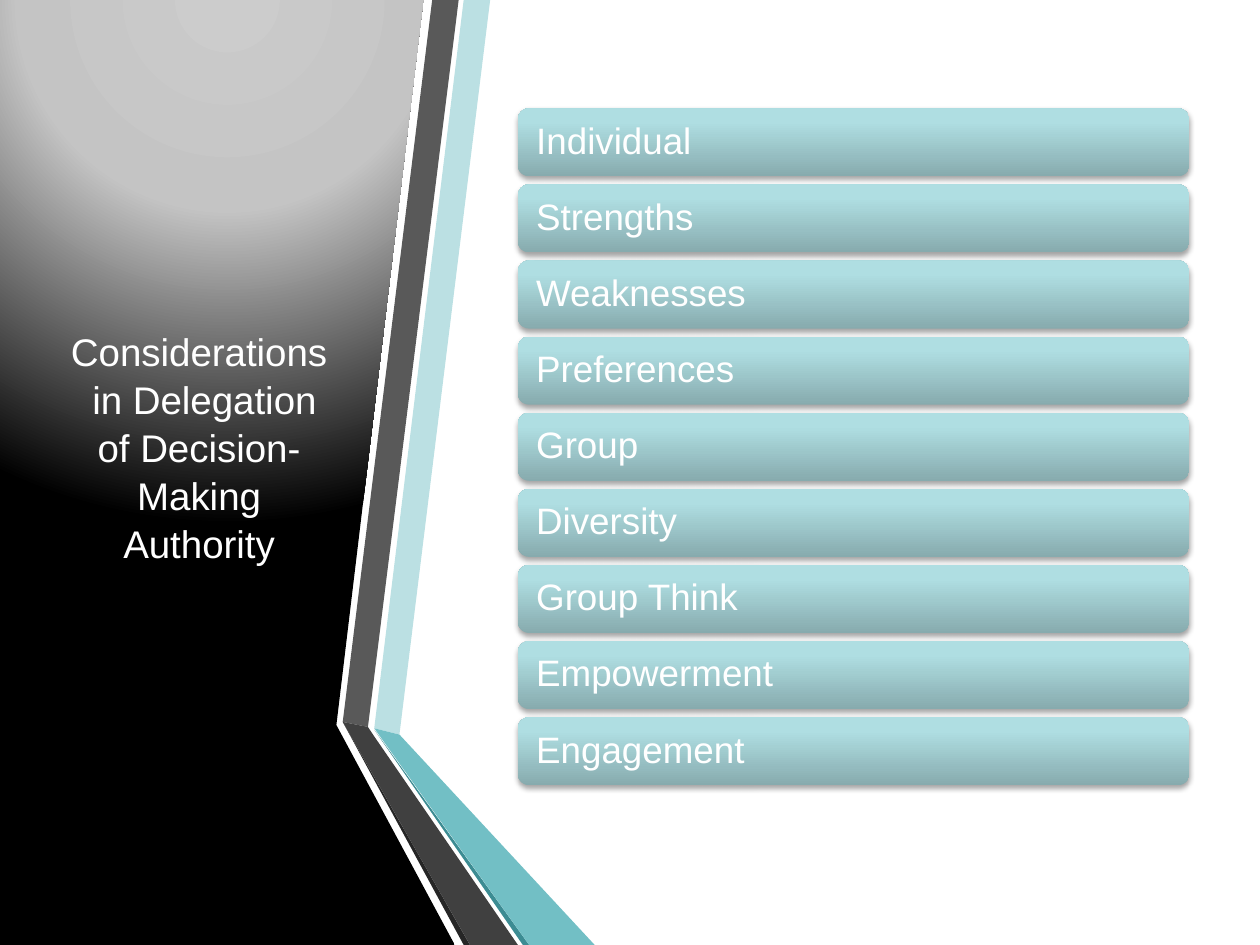
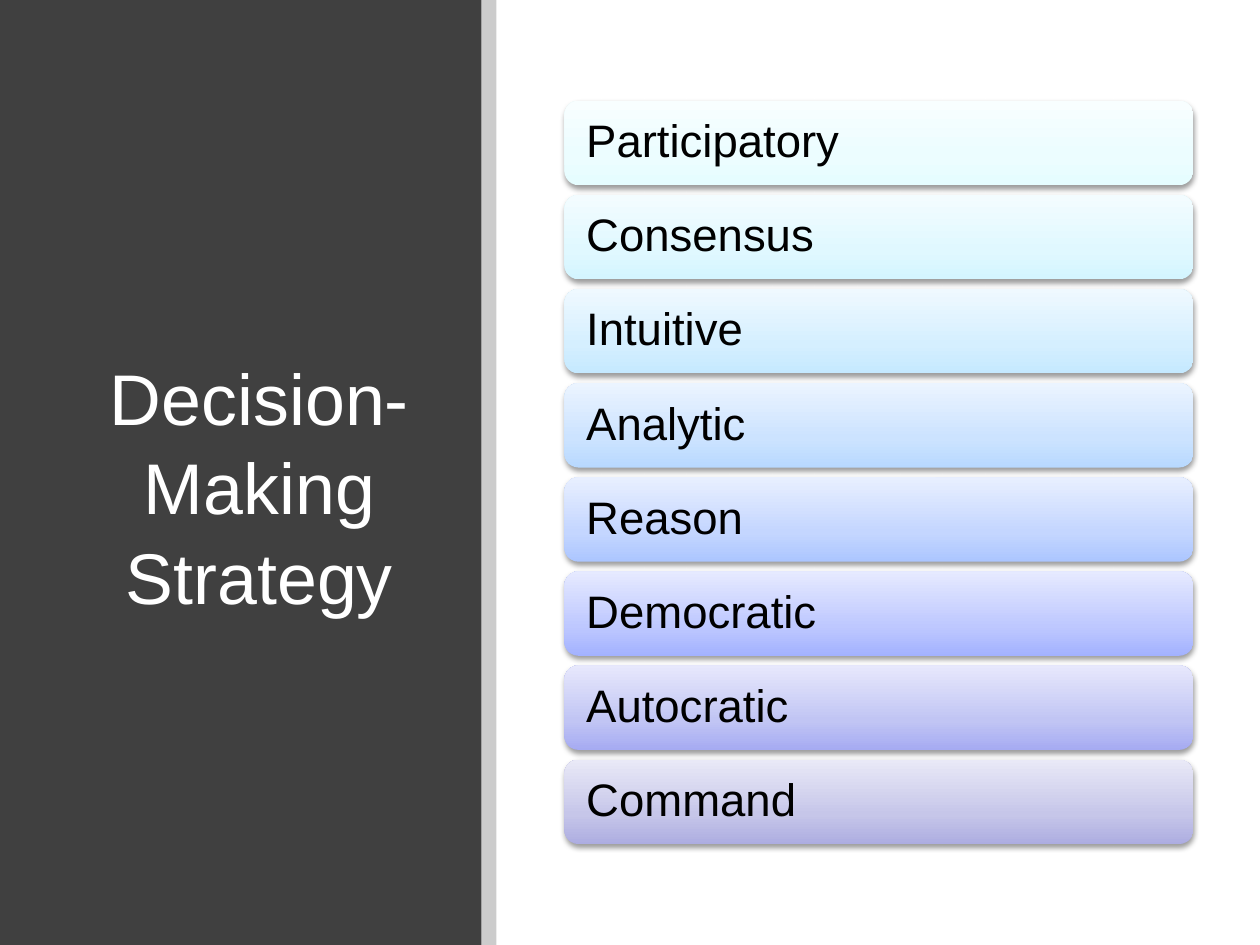
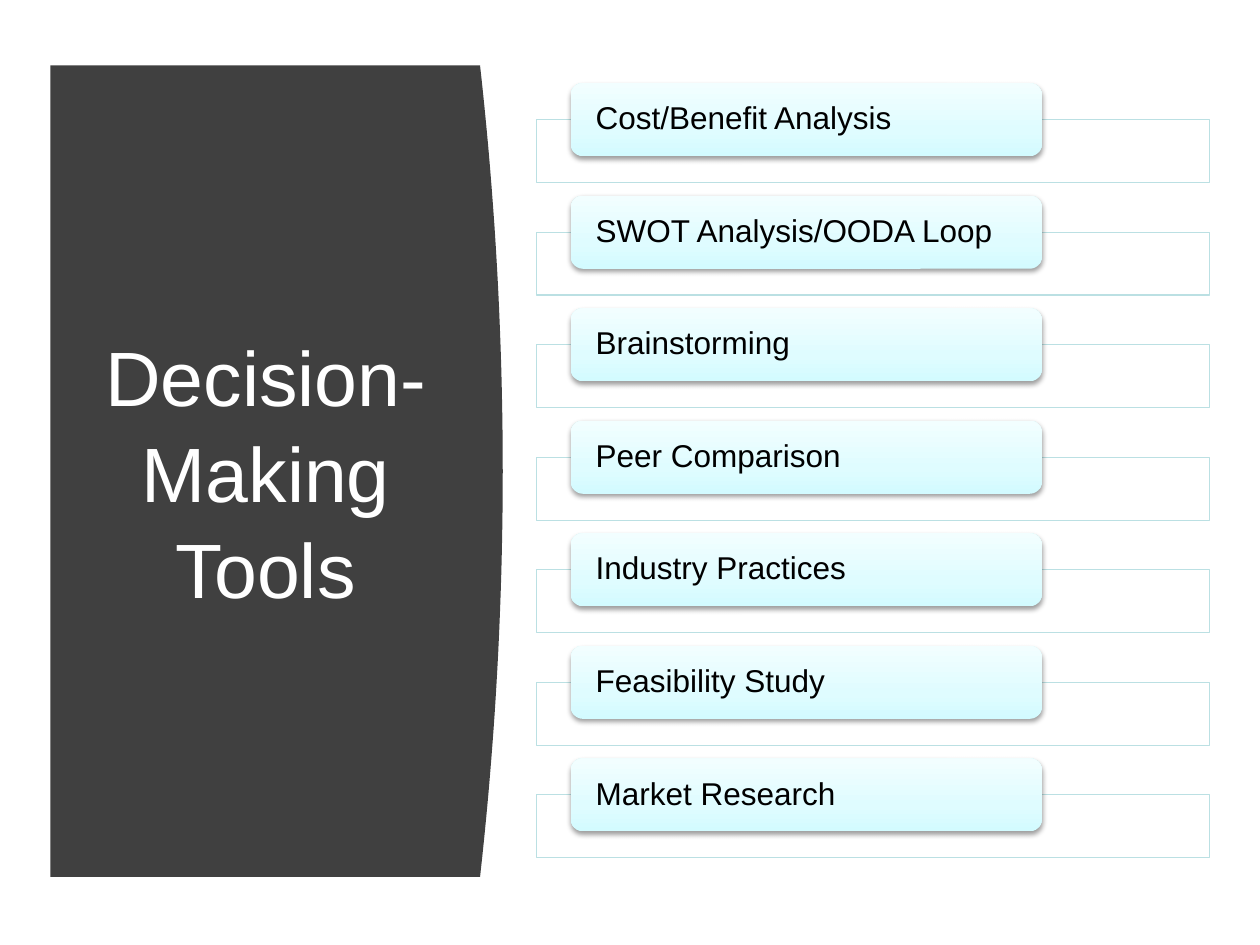
from lxml import etree
from pptx import Presentation
from pptx import util as u
from pptx.dml.color import RGBColor
from pptx.enum import shapes, text
from pptx.oxml import ns

COLUMNS, ROWS = 100, 75
FONT = "Arial"
WHITE, BLACK, CHARCOAL, AQUA = "FFFFFF", "000000", "404040", "BBE0E3"
UPWARD = ("lin", {"ang": "16200000", "scaled": "0"})


def rgb(code):
    return RGBColor.from_string(code)


def add_xml(parent, tag, **attributes):
    return etree.SubElement(parent, ns.qn(tag), attributes)


class Deck:
    """Holds the shared style and the slide being built."""

    def __init__(self):
        self.prs = Presentation()
        self.prs.slide_width, self.prs.slide_height = u.Inches(10), u.Inches(7.5)
        self.slide = None

    def new_slide(self):
        self.slide = self.prs.slides.add_slide(self.prs.slide_layouts[5])

    def x(self, columns):
        return round(self.prs.slide_width * columns / COLUMNS)

    def y(self, rows):
        return round(self.prs.slide_height * rows / ROWS)

    def box(self, left, top, width, height):
        return self.x(left), self.y(top), self.x(width), self.y(height)

    def title(self, wording, size, *place):
        """Place the title placeholder above everything drawn so far."""
        title = self.slide.shapes.title
        title.left, title.top, title.width, title.height = self.box(*place)
        self.slide.shapes._spTree.append(title._element)
        title.text_frame.auto_size = text.MSO_AUTO_SIZE.NONE
        self.label(title, wording, size, WHITE, text.PP_ALIGN.CENTER, 1.04)

    def label(self, shape, wording, size, color, align, spacing):
        frame = shape.text_frame
        frame.text = wording
        frame.word_wrap = True
        frame.vertical_anchor = text.MSO_ANCHOR.MIDDLE
        paragraph = frame.paragraphs[0]
        paragraph.alignment, paragraph.line_spacing = align, spacing
        font = paragraph.font
        font.name, font.size, font.color.rgb = FONT, u.Pt(size), rgb(color)

    def plain(self, shape, fill, alpha=100):
        shape.shadow.inherit = False
        shape.line.fill.background()
        shape.fill.solid()
        shape.fill.fore_color.rgb = rgb(fill)
        if alpha < 100:
            color = shape._element.spPr.find(".//" + ns.qn("a:srgbClr"))
            add_xml(color, "a:alpha", val=str(alpha * 1000))
        return shape

    def rectangle(self, place, fill, alpha=100, kind=shapes.MSO_SHAPE.RECTANGLE):
        shape = self.slide.shapes.add_shape(kind, *self.box(*place))
        return self.plain(shape, fill, alpha)

    def outline(self, points, fill):
        corners = [(self.x(column), self.y(row)) for column, row in points]
        builder = self.slide.shapes.build_freeform(*corners[0])
        builder.add_line_segments(corners[1:], close=True)
        return self.plain(builder.convert_to_shape(), fill)

    def gradient(self, shape, stops, direction=UPWARD):
        """Fill with (percent, colour) stops, and return the shading element."""
        properties = shape._element.spPr
        solid = properties.find(ns.qn("a:solidFill"))
        gradient = etree.Element(ns.qn("a:gradFill"), rotWithShape="1")
        stop_list = add_xml(gradient, "a:gsLst")
        for percent, color in stops:
            stop = add_xml(stop_list, "a:gs", pos=str(percent * 1000))
            add_xml(stop, "a:srgbClr", val=color)
        tag, attributes = direction
        shade = add_xml(gradient, "a:" + tag, **attributes)
        properties.replace(solid, gradient)
        return shade

    def shadow(self, shape, opacity, distance):
        effects = shape._element.spPr.find(ns.qn("a:effectLst"))
        outer = add_xml(effects, "a:outerShdw", blurRad=str(u.Pt(3.1)),
                        dist=str(u.Pt(distance)), dir="5400000", rotWithShape="0")
        color = add_xml(outer, "a:srgbClr", val=BLACK)
        add_xml(color, "a:alpha", val=str(opacity * 1000))

    def bar(self, wording, place, stops, size, inset, color=BLACK,
            opacity=38, distance=1.6):
        bar = self.rectangle(place, WHITE, kind=shapes.MSO_SHAPE.ROUNDED_RECTANGLE)
        self.gradient(bar, stops)
        self.shadow(bar, opacity, distance)
        frame = bar.text_frame
        frame.margin_left = frame.margin_right = self.x(inset)
        frame.margin_top = frame.margin_bottom = 0
        self.label(bar, wording, size, color, text.PP_ALIGN.LEFT, 0.9)


def considerations(deck):
    deck.new_slide()
    # Spotlit panel and folded ribbons
    panel = deck.outline([(0, 0), (33.6, 0), (26.7, 57.55), (36.1, 75), (0, 75)], BLACK)
    glow = deck.gradient(panel, [(0, "CCCCCC"), (40, "C4C4C4"), (100, BLACK)],
                         ("path", {"path": "circle"}))
    add_xml(glow, "a:fillToRect", l="50000", t="-80000", r="50000", b="180000")
    ribbons = [
        (AQUA, [(29.7, 57.8), (31.7, 58.3), (38.9, 0), (36.8, 0)]),
        ("595959", [(36.4, 0), (34.3, 0), (27.2, 57.3), (29.2, 57.7)]),
        ("262626", [(27.2, 57.3), (36.8, 75), (37.3, 75)]),
        ("3C8C93", [(29.7, 57.9), (41.5, 75), (42, 75)]),
        ("72BFC5", [(29.7, 57.8), (42, 75), (47.2, 75), (31.7, 58.3)]),
        (CHARCOAL, [(41.1, 75), (29.6, 58.3), (29.2, 57.7), (27.2, 57.3), (37.3, 75)]),
    ]
    for color, points in ribbons:
        deck.outline(points, color)
    deck.title("Considerations  in Delegation of Decision-Making Authority",
               22, 4.4, 7.5, 22.8, 55.8)
    # Considerations
    teal = [(0, "87ABAE"), (80, "AFDEE2"), (100, "AFE0E4")]
    factors = ["Individual", "Strengths", "Weaknesses", "Preferences", "Group",
               "Diversity", "Group Think", "Empowerment", "Engagement"]
    for row, factor in enumerate(factors):
        deck.bar(factor, (41.1, 8.6 + 6.04 * row, 53.3, 5.4), teal, 21, 1.2,
                 WHITE, opacity=35, distance=1.8)


def strategy(deck):
    deck.new_slide()
    # Side panel with edge strip
    deck.rectangle((0, 0, 38.2, 75), CHARCOAL)
    deck.rectangle((38.2, 0, 1.2, 75), BLACK, alpha=20)
    deck.title("Decision-Making Strategy", 41, 6.9, 8.9, 27.4, 59.1)
    # Strategies, from shared to single-handed
    strategies = [
        ("Participatory", "E6FDFF", "ECFDFF", "F8FEFF"),
        ("Consensus", "D4F5FF", "E0F8FF", "F3FCFF"),
        ("Intuitive", "C5E9FF", "D5EFFF", "EFF9FF"),
        ("Analytic", "B8D9FF", "CCE3FF", "EBF4FF"),
        ("Reason", "ACC6FF", "C4D6FF", "E8EFFF"),
        ("Democratic", "A3B2FF", "BEC8FF", "E6EAFF"),
        ("Autocratic", "A6ABF2", "C1C5F4", "E7E8FC"),
        ("Command", "ADADE1", "C6C6E9", "E9E9F7"),
    ]
    for row, (name, *colors) in enumerate(strategies):
        deck.bar(name, (44.8, 8 + 7.47 * row, 49.9, 6.7),
                 zip((0, 35, 100), colors), 26, 1.4)


def tools(deck):
    deck.new_slide()
    # Panel with a bulging right edge
    left, corner, bulge, middle, half, steps = 4, 38.1, 1.8, 37.4, 32.2, 40
    heights = [2 * step / steps - 1 for step in range(steps + 1)]
    edge = [(corner + bulge * (1 - h * h), middle + half * h) for h in heights]
    deck.outline([(left, middle - half), *edge, (left, middle + half)], CHARCOAL)
    deck.title("Decision-Making Tools", 44, 7.1, 11.1, 28, 52.4)
    # Tools, each on its own frame
    ice = [(0, "D3FBFF"), (35, "DFFCFF"), (100, "F2FEFF")]
    methods = ["Cost/Benefit Analysis", "SWOT Analysis/OODA Loop", "Brainstorming",
               "Peer Comparison", "Industry Practices", "Feasibility Study",
               "Market Research"]
    for row, method in enumerate(methods):
        top = 6.6 + 8.93 * row
        frame = deck.rectangle((42.6, top + 2.9, 53.4, 5), WHITE, alpha=90)
        frame.line.color.rgb, frame.line.width = rgb(AQUA), u.Pt(0.75)
        deck.bar(method, (45.3, top, 37.4, 5.8), ice, 18, 1.7)


def main():
    deck = Deck()
    for build in (considerations, strategy, tools):
        build(deck)
    deck.prs.save("out.pptx")


if __name__ == "__main__":
    main()
